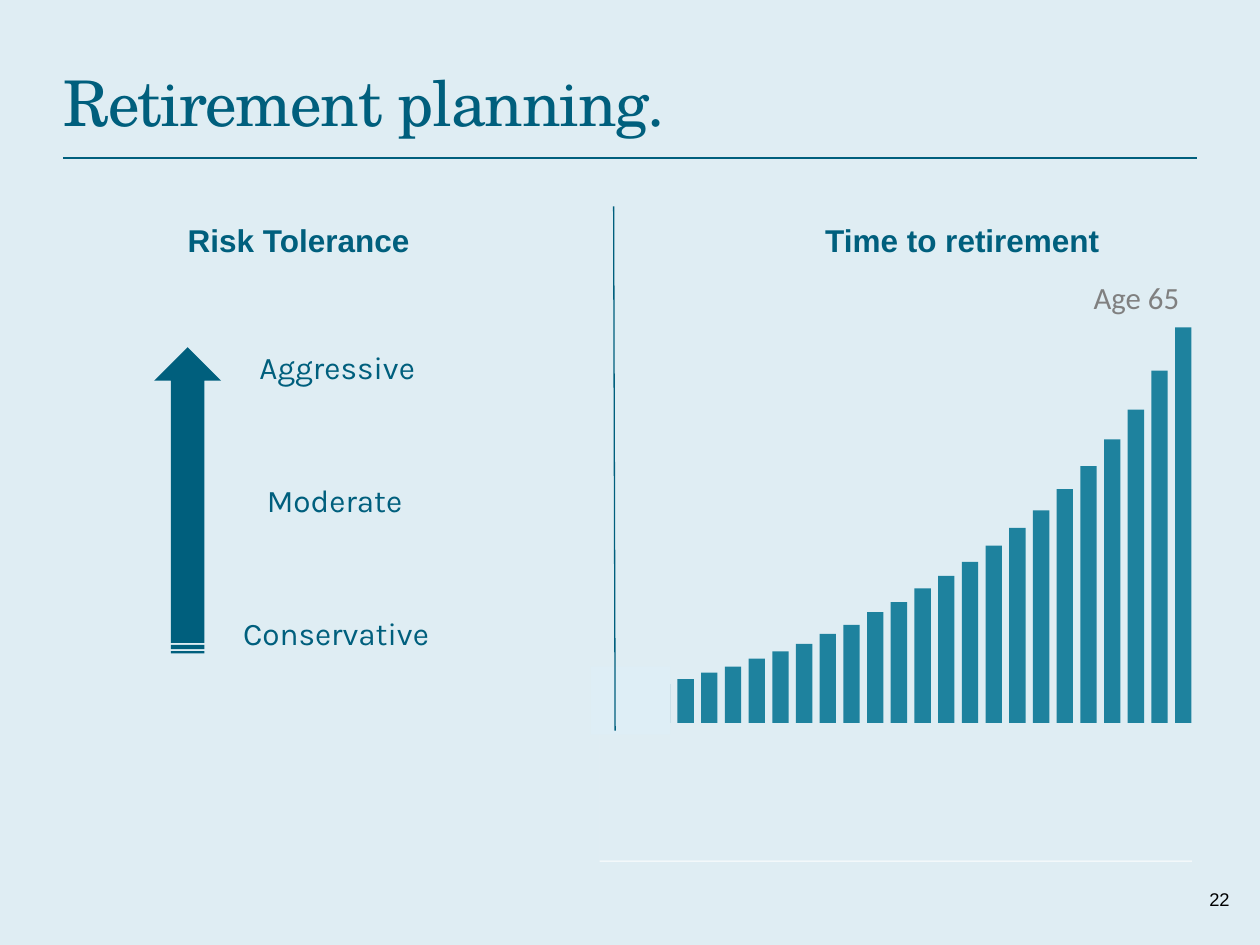
from dataclasses import dataclass

from lxml import etree
from pptx import Presentation
from pptx.dml.color import RGBColor
from pptx.enum.shapes import MSO_CONNECTOR, MSO_SHAPE
from pptx.enum.text import MSO_ANCHOR, MSO_AUTO_SIZE, PP_ALIGN
from pptx.oxml.ns import qn
from pptx.util import Cm, Pt

LINE = MSO_CONNECTOR.STRAIGHT
RECT = MSO_SHAPE.RECTANGLE
ARROW = MSO_SHAPE.STRIPED_RIGHT_ARROW
TOP = MSO_ANCHOR.TOP
FIXED = MSO_AUTO_SIZE.NONE
LEFT, MID = PP_ALIGN.LEFT, PP_ALIGN.CENTER


@dataclass(frozen=True)
class Style:
    face: str
    size: float
    color: str
    bold: bool = False


@dataclass(frozen=True)
class Theme:
    back: str = "FFFFFF"
    tint: str = "2E87B0"
    clear: int = 15  # percent opacity of the tint
    main: str = "005F7D"
    bar: str = "1E829E"
    patch: str = "DEEEF6"
    title: Style = Style("TeX Gyre Schola", 36, "005F7D")
    head: Style = Style("Arial", 18, "005F7D", True)
    label: Style = Style("Karla", 18, "005F7D")
    age: Style = Style("Calibri", 17.6, "808080")
    number: Style = Style("Arial", 10.5, "000000")


THEME = Theme()

RISKS = [  # label, left, width
    ("Aggressive", 4.22, 6.38),
    ("Moderate", 4.37, 4.22),
    ("Conservative", 3.89, 6.38),
]
# Rise of each bar above the floor, and its full height
RISES = [0.79, 0.89, 1.02, 1.14, 1.3, 1.45, 1.6, 1.8, 1.98, 2.24, 2.44, 2.72,
         2.97, 3.25, 3.58, 3.94, 4.29, 4.72, 5.18, 5.72, 6.32, 7.11, 7.98]
HIGHS = ([3.43] * 4 + [3.89] * 4 + [4.62, 4.83] + [5.03] * 2 + [5.66] * 3
         + [6.65] * 3 + [7.62] + [7.98] * 4)


def paint(fill, color):
    fill.solid()
    fill.fore_color.rgb = RGBColor.from_string(color)


def write(shape, text, style, align=LEFT, inset=None):
    frame = shape.text_frame
    frame.text = text
    frame.word_wrap = True
    frame.auto_size = FIXED
    frame.vertical_anchor = TOP
    if inset is not None:
        frame.margin_left = frame.margin_right = Cm(inset)
        frame.margin_top = frame.margin_bottom = Cm(inset)
    para = frame.paragraphs[0]
    para.alignment = align
    font = para.runs[0].font
    font.name, font.size, font.bold = style.face, Pt(style.size), style.bold
    font.color.rgb = RGBColor.from_string(style.color)
    return para.runs[0]


def add_text(slide, x, y, w, h, text, style, align=LEFT, inset=None):
    box = slide.shapes.add_textbox(Cm(x), Cm(y), Cm(w), Cm(h))
    write(box, text, style, align, inset)


def add_block(slide, kind, x, y, w, h, color):
    shape = slide.shapes.add_shape(kind, Cm(x), Cm(y), Cm(w), Cm(h))
    shape.shadow.inherit = False
    paint(shape.fill, color)
    shape.line.fill.background()
    return shape


def add_tint(slide, x, y, w, h):
    shape = add_block(slide, RECT, x, y, w, h, THEME.tint)
    color = shape._element.spPr.find(qn("a:solidFill"))[0]
    etree.SubElement(color, qn("a:alpha"), val=str(THEME.clear * 1000))
    return shape


def add_line(slide, x1, y1, x2, y2, width):
    line = slide.shapes.add_connector(LINE, Cm(x1), Cm(y1), Cm(x2), Cm(y2))
    line.line.color.rgb = RGBColor.from_string(THEME.main)
    line.line.width = Pt(width)
    etree.SubElement(line._element.spPr, qn("a:effectLst"))


def add_back(slide, w, h):
    paint(slide.background.fill, THEME.back)
    tint = add_tint(slide, 0, 0, w, h)
    # Behind the title
    slide.shapes.title._element.addprevious(tint._element)


def add_title(slide, x, y, w):
    title = slide.shapes.title
    title.left, title.top = Cm(x), Cm(y)
    title.width, title.height = Cm(14.73), Cm(1.32)
    run = write(title, "Retirement planning.", THEME.title, inset=0)
    run.font._element.set("spc", "-70")
    # Rule below the title
    add_line(slide, x, y + 1.91, x + w, y + 1.91, 1)


def add_risk(slide, x, y, w):
    add_text(slide, x, y, w, 1.07, "Risk Tolerance", THEME.head, MID)
    # Upward arrow
    arrow = add_block(slide, ARROW, x - 0.06, y + 5.07, 6.17, 1.35, THEME.main)
    arrow.rotation = 270
    # Risk levels, evenly spaced
    for i, (text, left, wide) in enumerate(RISKS):
        add_text(slide, x + left, y + 2.55 + 2.68 * i, wide, 1.02,
                 text, THEME.label)


def add_time(slide, x, y, w):
    add_text(slide, x, y, w, 1.07, "Time to retirement", THEME.head, MID)
    # Growing bars, evenly spaced
    floor, first, last = y + 10.24, x - 0.96, x + 9.55
    pitch = (last - first) / (len(RISES) - 1)
    for i, (rise, high) in enumerate(zip(RISES, HIGHS)):
        add_block(slide, RECT, first + pitch * i, floor - rise, 0.33, high,
                  THEME.bar)
    # Floor panel that levels the feet of the bars
    add_block(slide, RECT, x - 2.05, floor, 11.94, 2.79, THEME.back)
    add_tint(slide, x - 2.05, floor, 11.94, 2.77)
    add_text(slide, x + 6.99, y + 1.17, 3.56, 1.19, "Age 65",
             THEME.age, MID, 0.1)
    # Pale patch before the first bar
    add_block(slide, RECT, x - 2.23, y + 9.1, 1.6, 1.37, THEME.patch)


def main():
    wide, high = 25.4, 19.05
    deck = Presentation()
    deck.slide_width, deck.slide_height = Cm(wide), Cm(high)
    slide = deck.slides.add_slide(deck.slide_layouts[5])

    add_back(slide, wide, high)
    add_title(slide, 1.27, 1.27, 22.86)
    add_risk(slide, 0.76, 4.34, 10.52)
    add_time(slide, 14.14, 4.34, 10.52)
    # Divider between the two halves
    add_line(slide, 12.37, 4.16, 12.4, 14.73, 0.75)
    # Page number
    add_text(slide, 24.13, 17.78, 1.17, 0.71, "22", THEME.number)

    deck.save("out.pptx")


if __name__ == "__main__":
    main()
